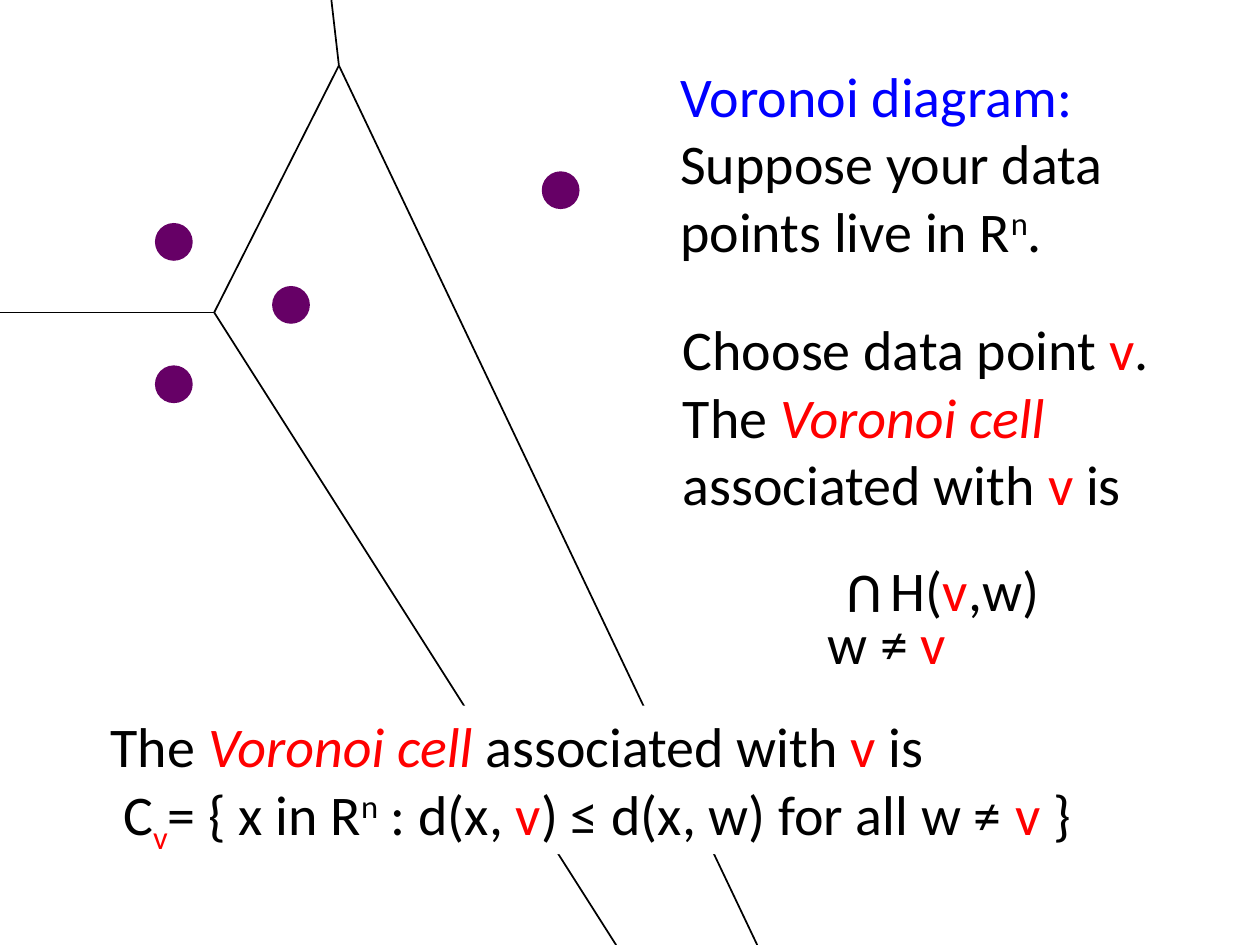
from lxml.etree import SubElement
from pptx import Presentation
from pptx.dml.color import RGBColor
from pptx.enum.shapes import MSO_CONNECTOR, MSO_SHAPE
from pptx.enum.text import MSO_ANCHOR, PP_ALIGN
from pptx.oxml.ns import qn
from pptx.util import Inches, Pt

BLACK, RED, BLUE, PURPLE, WHITE = "000000", "FF0000", "0000FF", "660066", "FFFFFF"
V = ("v", {"color": RED})
SUPER_N = ("n", {"baseline": 30})
CELL_PHRASE = [
    "The ",
    ("Voronoi cell ", {"color": RED, "italic": True}),
    "associated with ",
    V,
    " is",
]


def rgb(value):
    return RGBColor.from_string(value)


def add_run(paragraph, text, color=BLACK, italic=False, baseline=0):
    run = paragraph.add_run()
    run.text = text
    run.font.name = "Calibri"
    run.font.size = Pt(32)
    run.font.italic = italic
    run.font.color.rgb = rgb(color)
    if baseline:
        run.font._element.set("baseline", str(baseline * 1000))


def add_text(slide, box, paragraphs, fill=None, rotation=0, centred=(), gap=0):
    label = slide.shapes.add_textbox(*map(Inches, box))
    label.rotation = rotation
    if fill:
        label.fill.solid()
        label.fill.fore_color.rgb = rgb(fill)
    frame = label.text_frame
    frame.word_wrap = True
    frame.vertical_anchor = MSO_ANCHOR.TOP
    for index, pieces in enumerate(paragraphs):
        paragraph = frame.add_paragraph() if index else frame.paragraphs[0]
        if index in centred:
            paragraph.alignment = PP_ALIGN.CENTER
            paragraph.space_before = Pt(gap)
        for piece in pieces:
            text, style = (piece, {}) if isinstance(piece, str) else piece
            add_run(paragraph, text, **style)


def add_site(slide, left, top, diameter=0.3):
    site = slide.shapes.add_shape(
        MSO_SHAPE.OVAL, *map(Inches, (left, top, diameter, diameter))
    )
    site.shadow.inherit = False
    site.fill.solid()
    site.fill.fore_color.rgb = rgb(PURPLE)
    site.line.fill.background()


def add_edge(slide, start, end):
    edge = slide.shapes.add_connector(
        MSO_CONNECTOR.STRAIGHT, *map(Inches, (*start, *end))
    )
    edge.line.color.rgb = rgb(BLACK)
    edge.line.width = Pt(1)
    SubElement(edge._element.spPr, qn("a:effectLst"))


def main():
    deck = Presentation()
    deck.slide_width, deck.slide_height = Inches(10), Inches(7.5)
    slide = deck.slides.add_slide(deck.slide_layouts[6])

    for left, top in [(1.23, 2.9), (2.16, 2.27), (1.23, 1.77), (4.3, 1.36)]:
        add_site(slide, left, top)

    left_vertex, top_vertex = (1.7, 2.48), (2.69, 0.52)
    add_edge(slide, left_vertex, top_vertex)
    for vertex, border_points in [
        (left_vertex, [(4.89, 7.5), (0, 2.48)]),
        (top_vertex, [(6.01, 7.5), (2.63, 0)]),
    ]:
        for border_point in border_points:
            add_edge(slide, vertex, border_point)

    add_text(slide, (5.3, 0.44, 4.19, 1.72), [
        [("Voronoi diagram:", {"color": BLUE})],
        ["Suppose your data points live in R", SUPER_N, "."],
    ])
    add_text(slide, (5.32, 2.45, 4.68, 2.58), [
        ["Choose data point ", V, "."],
        CELL_PHRASE,
        ["H(", V, ",w)"],
    ], centred=(2,), gap=22)
    add_text(slide, (6.76, 4.43, 0.34, 0.64), [["U"]], rotation=180)
    add_text(slide, (6.47, 4.78, 2.79, 0.64), [["w ≠ ", V]])
    add_text(slide, (0.78, 5.6, 9.22, 1.18), [
        CELL_PHRASE,
        [" C", ("v", {"color": RED, "baseline": -25}), "= { x in R", SUPER_N,
         " : d(x, ", V, ") ≤ d(x, w) for all w ≠ ", V, " }"],
    ], fill=WHITE)

    deck.save("out.pptx")


if __name__ == "__main__":
    main()
